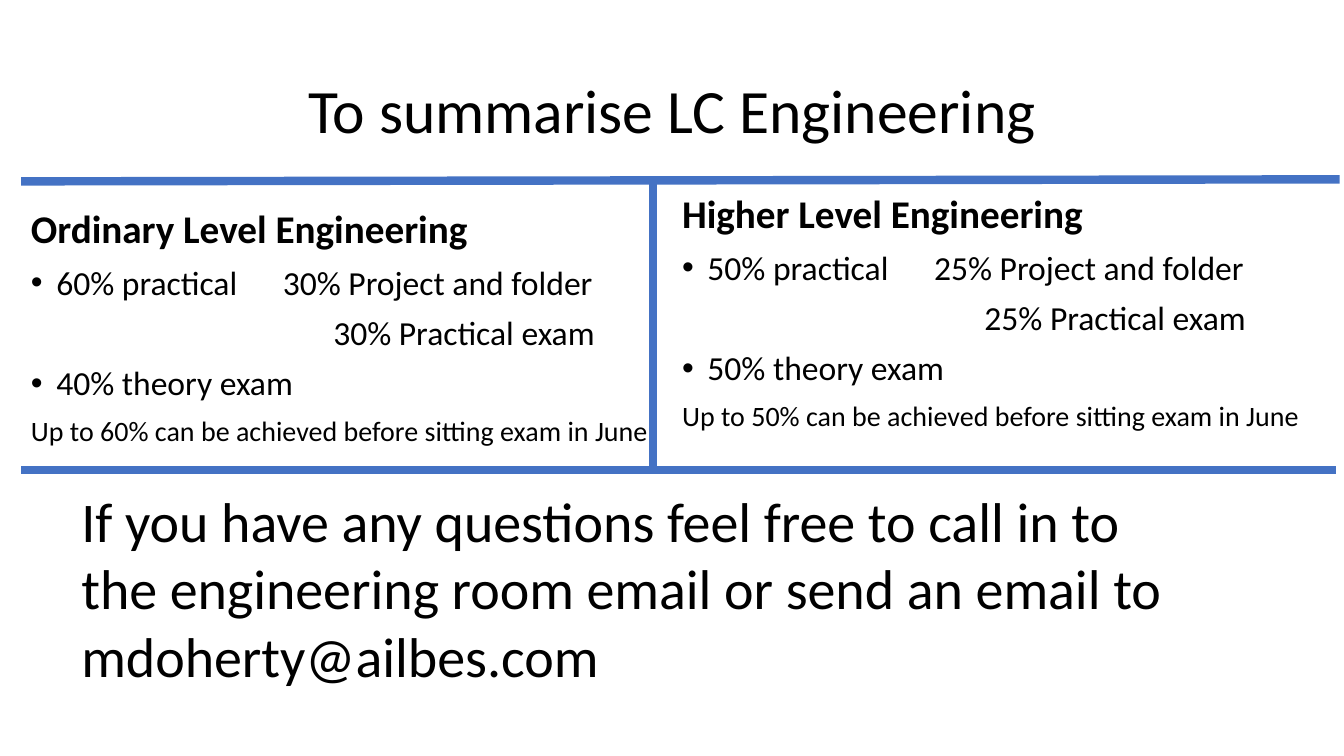
from lxml import etree
from pptx import Presentation
from pptx.dml.color import RGBColor
from pptx.enum.shapes import MSO_CONNECTOR
from pptx.enum.text import MSO_ANCHOR, MSO_AUTO_SIZE, PP_ALIGN
from pptx.oxml.ns import qn
from pptx.util import Cm, Pt

BLACK = RGBColor(0x00, 0x00, 0x00)
BLUE = RGBColor(0x44, 0x72, 0xC4)
STRAIGHT = MSO_CONNECTOR.STRAIGHT
MIDDLE = MSO_ANCHOR.MIDDLE
GROW = MSO_AUTO_SIZE.SHAPE_TO_FIT_TEXT
NO_FIT = MSO_AUTO_SIZE.NONE
CENTER = PP_ALIGN.CENTER
FONT = "Calibri"
BULLET_INDENT = 0.64
DETAIL_INDENT = 7.62


def write(paragraph, text, size=24, bold=False, align=None, spacing=None,
          before=0, indent=0, bullet=False):
    properties = paragraph._p.get_or_add_pPr()
    if indent:
        properties.set("marL", str(Cm(indent)))
    if bullet:
        properties.set("indent", str(-Cm(indent)))
        etree.SubElement(properties, qn("a:buFont"), typeface="Arial")
        etree.SubElement(properties, qn("a:buChar"), char="•")
    paragraph.alignment = align
    paragraph.line_spacing = spacing
    paragraph.space_before = Pt(before)
    run = paragraph.add_run()
    run.text = text
    run.font.name = FONT
    run.font.size = Pt(size)
    run.font.bold = bold
    run.font.color.rgb = BLACK


class SummarySlide:
    def __init__(self, presentation):
        self.slide = presentation.slides.add_slide(presentation.slide_layouts[5])

    def title(self, text, left, top, width, height):
        heading = self.slide.shapes.title
        heading.left, heading.top = Cm(left), Cm(top)
        heading.width, heading.height = Cm(width), Cm(height)
        frame = heading.text_frame
        frame.vertical_anchor = MIDDLE
        write(frame.paragraphs[0], text, size=44, align=CENTER, spacing=0.9)

    def text(self, lines, left, top, width, height, fit=NO_FIT):
        box = self.slide.shapes.add_textbox(Cm(left), Cm(top), Cm(width), Cm(height))
        frame = box.text_frame
        frame.word_wrap = True
        frame.auto_size = fit
        for number, (content, style) in enumerate(lines):
            paragraph = frame.add_paragraph() if number else frame.paragraphs[0]
            before = 10 if number else 0
            write(paragraph, content, before=before, **style)

    def level(self, name, practical, part, theory, *place):
        plain = {"spacing": 0.9}
        bulleted = {**plain, "indent": BULLET_INDENT, "bullet": True}
        self.text([
            (f"{name} Level Engineering", {**plain, "size": 28, "bold": True}),
            (f"{practical}% practical \t{part}% Project and folder", bulleted),
            (f"{part}% Practical exam", {**plain, "indent": DETAIL_INDENT}),
            (f"{theory}% theory exam", bulleted),
            (f"Up to {practical}% can be achieved before sitting exam in June",
             {**plain, "size": 20}),
        ], *place)

    def rule(self, *ends):
        line = self.slide.shapes.add_connector(STRAIGHT, *map(Cm, ends))
        line.line.color.rgb = BLUE
        line.line.width = Pt(6)
        etree.SubElement(line._element.spPr, qn("a:effectLst"))


def main():
    presentation = Presentation()
    presentation.slide_width = Cm(33.87)
    presentation.slide_height = Cm(19.05)
    summary = SummarySlide(presentation)
    summary.title("To summarise LC Engineering", 2.34, 1.02, 29.21, 3.68)
    summary.level("Ordinary", 60, 30, 40, 0.53, 5.16, 16.15, 11.73)
    summary.level("Higher", 50, 25, 50, 16.94, 4.78, 17.27, 12.09)
    summary.rule(16.46, 4.52, 16.46, 11.84)
    summary.rule(0.53, 11.84, 33.66, 11.84)
    summary.rule(0.53, 4.57, 33.76, 4.52)
    summary.text([
        ("If you have any questions feel free to call in to the engineering room "
         "email or send an email to mdoherty@ailbes.com", {"size": 40}),
    ], 1.8, 12.14, 28.58, 5.38, fit=GROW)
    presentation.save("out.pptx")


if __name__ == "__main__":
    main()
